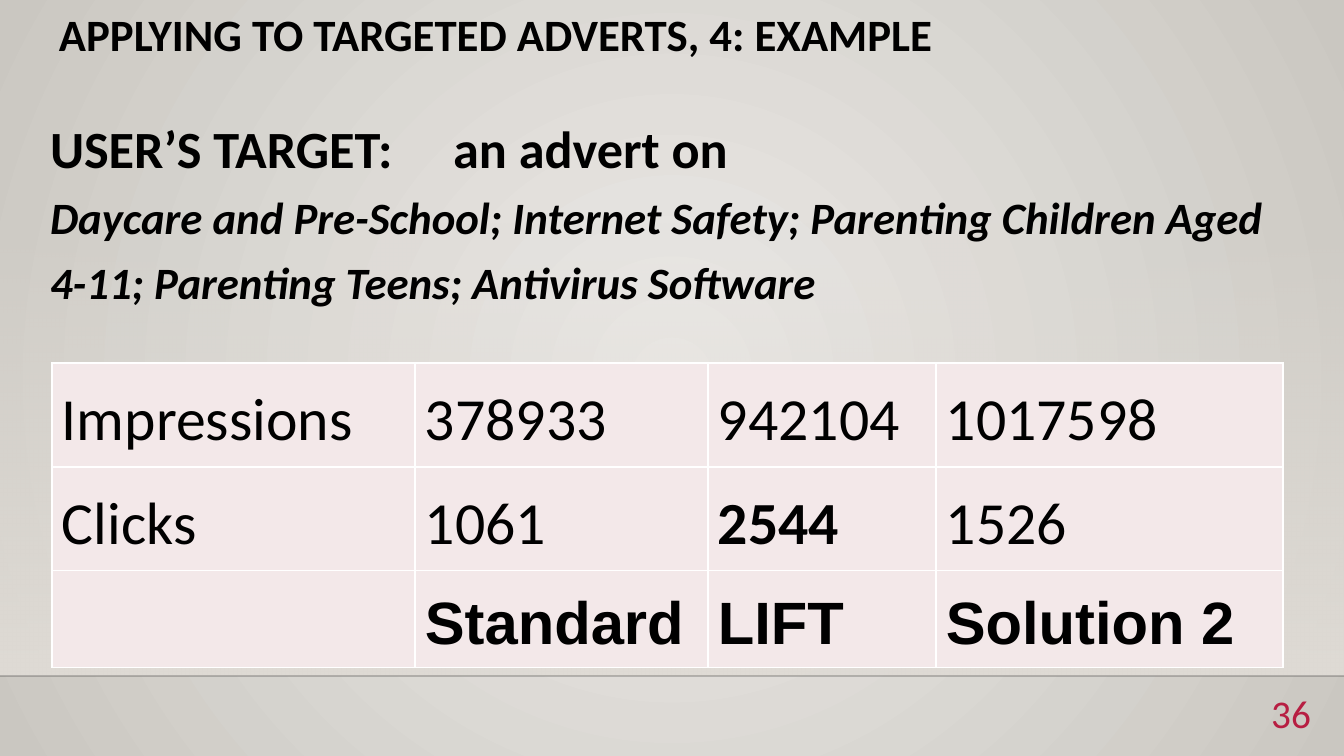
from dataclasses import dataclass
from typing import Any

from lxml.etree import SubElement as Sub
from pptx import Presentation
from pptx.dml.color import RGBColor as RGB
from pptx.enum.shapes import MSO_CONNECTOR as Link, MSO_SHAPE as Kind
from pptx.enum.text import MSO_ANCHOR as Anchor, MSO_AUTO_SIZE as Fit, PP_ALIGN as Align
from pptx.oxml.ns import qn
from pptx.util import Emu, Pt

SCALE = 914400 / 134.4  # EMU in one px
WIDE, HIGH = 1344, 756
PAD, INDENT = 13, 17

BLACK = RGB(0x00, 0x00, 0x00)
WHITE = RGB(0xFF, 0xFF, 0xFF)
RULE = RGB(0x00, 0x00, 0x01)
LIGHT = RGB(0xEC, 0xEA, 0xE7)
DARK = RGB(0xCA, 0xC7, 0xC1)
BAND = RGB(0xDF, 0xDB, 0xD5)
CELL = RGB(0xF3, 0xE8, 0xE9)
RED = RGB(0xB7, 0x1E, 0x42)


@dataclass
class Box:
    left: int
    top: int
    width: int
    height: int


@dataclass
class Style:
    size: int
    name: str = "Calibri"
    bold: bool = False
    italic: bool = False
    color: RGB = BLACK
    space: float = 1.0
    align: Align = Align.LEFT


HEAD = Style(24, bold=True, space=0.9)
LEAD = Style(28, bold=True, space=1.2)
TOPIC = Style(24, bold=True, italic=True, space=1.2)
NUMBER = Style(21, color=RED, align=Align.RIGHT)
PLAIN = Style(32, space=1.15)
BEST = Style(32, bold=True, space=1.15)
LABEL = Style(32, name="Arial", bold=True, space=1.15)

COLS = [363, 293, 228, 347]
ROWS = [102, 102, 96]
DATA = [
    ["Impressions", "378933", "942104", "1017598"],
    ["Clicks", "1061", "2544", "1526"],
    ["", "Standard", "LIFT", "Solution 2"],
]


def px(n: int) -> Emu:
    return Emu(round(n * SCALE))


def spot(box: Box) -> tuple[Emu, ...]:
    return px(box.left), px(box.top), px(box.width), px(box.height)


def dress(para: Any, style: Style) -> None:
    para.alignment = style.align
    para.line_spacing = style.space
    para.space_before = Pt(0)
    font = para.font
    font.size, font.name = Pt(style.size), style.name
    font.bold, font.italic = style.bold, style.italic
    font.color.rgb = style.color


def frame(shape: Any, box: Box, anchor: Anchor, left: int = PAD) -> Any:
    shape.left, shape.top, shape.width, shape.height = spot(box)
    text = shape.text_frame
    text.word_wrap, text.auto_size = True, Fit.NONE
    text.vertical_anchor = anchor
    text.margin_left = px(left)
    text.margin_top = text.margin_right = text.margin_bottom = px(PAD)
    return text


def fade(node: Any, share: int) -> None:
    """Give a colour an opacity in percent."""
    color = next(node.iter(qn("a:srgbClr")))
    Sub(color, qn("a:alpha"), val=str(share * 1000))


def blend(fill: Any, first: RGB, last: RGB) -> None:
    fill.gradient()
    for stop, color, place in zip(fill.gradient_stops, (first, last), (0, 1)):
        stop.color.rgb, stop.position = color, place


def glow(slide: Any) -> None:
    """Radial background, light in the middle."""
    blend(slide.background.fill, LIGHT, DARK)
    grad = next(slide.element.iter(qn("a:gradFill")))
    grad.remove(grad.find(qn("a:lin")))
    ring = Sub(grad, qn("a:path"), path="circle")
    Sub(ring, qn("a:fillToRect"), l="50000", t="50000", r="50000", b="50000")


def floor(slide: Any) -> None:
    """Fading band and its rule, behind all text."""
    shapes, base = slide.shapes, 676
    band = shapes.add_shape(Kind.RECTANGLE, *spot(Box(0, 223, WIDE, base - 223)))
    band.shadow.inherit = False
    band.line.fill.background()
    blend(band.fill, BAND, BAND)
    band.fill.gradient_angle = 270
    fade(band.element.spPr, 0)

    rule = shapes.add_connector(Link.STRAIGHT, px(0), px(base), px(WIDE), px(base))
    rule.line.color.rgb, rule.line.width = RULE, Pt(1)
    fade(rule.line._get_or_add_ln(), 20)
    Sub(rule.element.spPr, qn("a:effectLst"))

    tree = band.element.getparent()
    for item in (rule, band):
        tree.insert(2, item.element)


def edge(cell: Any) -> None:
    """White border on all four sides."""
    props = cell._tc.get_or_add_tcPr()
    for side in ("lnL", "lnR", "lnT", "lnB"):
        line = Sub(props, qn(f"a:{side}"), w=str(Pt(1)))
        Sub(Sub(line, qn("a:solidFill")), qn("a:srgbClr"), val=str(WHITE))


def pick(row: int, text: str) -> Style:
    if row == len(DATA) - 1:
        return LABEL
    return BEST if text == "2544" else PLAIN


def grid(slide: Any) -> None:
    box = Box(52, 363, sum(COLS), sum(ROWS))
    table = slide.shapes.add_table(len(ROWS), len(COLS), *spot(box)).table
    table.first_row = table.horz_banding = False
    for col, width in zip(table.columns, COLS):
        col.width = px(width)
    for r, (row, height) in enumerate(zip(table.rows, ROWS)):
        row.height = px(height)
        for cell, text in zip(row.cells, DATA[r]):
            edge(cell)
            cell.fill.solid()
            cell.fill.fore_color.rgb = CELL
            cell.margin_left = cell.margin_right = px(10)
            cell.margin_top = cell.margin_bottom = px(10)
            cell.text = text
            dress(cell.text_frame.paragraphs[0], pick(r, text))


def main() -> None:
    deck = Presentation()
    deck.slide_width, deck.slide_height = px(WIDE), px(HIGH)
    slide = deck.slides.add_slide(deck.slide_layouts[1])
    glow(slide)
    floor(slide)

    # Title
    text = frame(slide.shapes.title, Box(46, 0, 1253, 77), Anchor.TOP)
    text.text = "APPLYING TO TARGETED ADVERTS, 4: EXAMPLE"
    dress(text.paragraphs[0], HEAD)

    # Target of the advert
    body = slide.placeholders[1]
    text = frame(body, Box(20, 91, 1278, 633), Anchor.TOP, PAD + INDENT)
    text.text = (
        "USER’S TARGET:\tan advert on\n"
        "Daycare and Pre-School; Internet Safety; Parenting Children Aged 4-11; "
        "Parenting Teens; Antivirus Software"
    )
    for para, style in zip(text.paragraphs, (LEAD, TOPIC)):
        props = para._p.get_or_add_pPr()
        props.set("marL", "0")
        props.set("indent", "0")
        Sub(props, qn("a:buNone"))
        if style is LEAD:
            tabs = Sub(props, qn("a:tabLst"))
            Sub(tabs, qn("a:tab"), pos=str(px(381)), algn="l")
        dress(para, style)

    # Results
    grid(slide)

    # Slide number
    box = Box(1243, 684, 81, 58)
    text = frame(slide.shapes.add_textbox(*spot(box)), box, Anchor.MIDDLE)
    text.text = "36"
    dress(text.paragraphs[0], NUMBER)

    deck.save("out.pptx")


if __name__ == "__main__":
    main()
